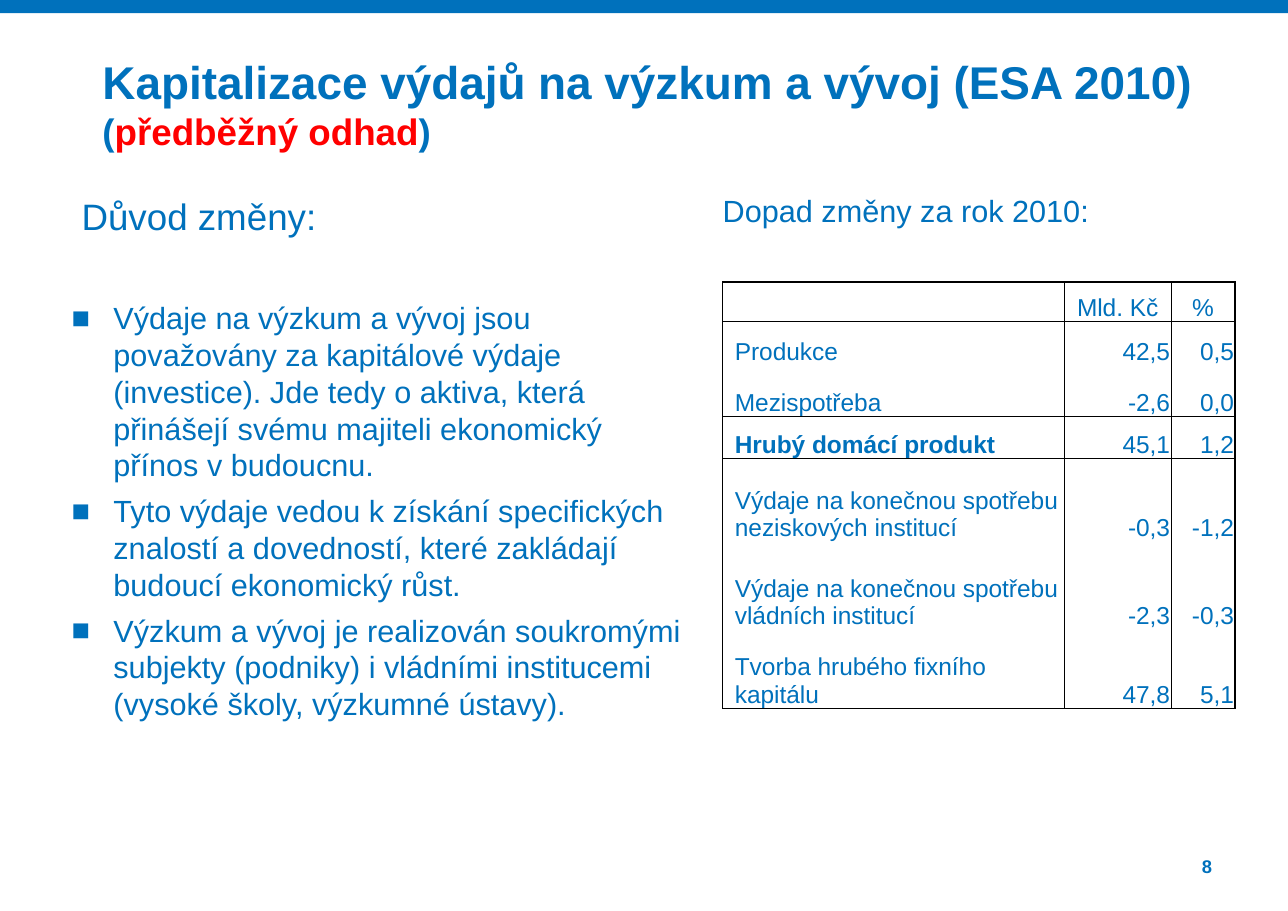
from lxml.etree import SubElement
from pptx import Presentation
from pptx.dml.color import RGBColor
from pptx.enum.shapes import MSO_SHAPE
from pptx.enum.text import MSO_ANCHOR, PP_ALIGN
from pptx.oxml import parse_xml
from pptx.oxml.ns import nsdecls, qn
from pptx.util import Inches, Pt

BLUE = RGBColor(0x00, 0x71, 0xBC)
RED = RGBColor(0xFF, 0x00, 0x00)
BLACK = RGBColor(0x00, 0x00, 0x00)

POINTS = [
    "Výdaje na výzkum a vývoj jsou považovány za kapitálové výdaje (investice). "
    "Jde tedy o aktiva, která přinášejí svému majiteli ekonomický přínos v budoucnu.",
    "Tyto výdaje vedou k získání specifických znalostí a dovedností, "
    "které zakládají budoucí ekonomický růst.",
    "Výzkum a vývoj je realizován soukromými subjekty (podniky) i vládními "
    "institucemi (vysoké školy, výzkumné ústavy).",
]
ROWS = [
    ("", "Mld. Kč", "%"),
    ("Produkce", "42,5", "0,5"),
    ("Mezispotřeba", "-2,6", "0,0"),
    ("Hrubý domácí produkt", "45,1", "1,2"),
    ("Výdaje na konečnou spotřebu neziskových institucí", "-0,3", "-1,2"),
    ("Výdaje na konečnou spotřebu vládních institucí", "-2,3", "-0,3"),
    ("Tvorba hrubého fixního kapitálu", "47,8", "5,1"),
]
WIDTHS = [3.1, 0.97, 0.58]
HEIGHTS = [0.36, 0.4, 0.46, 0.38, 0.76, 0.8, 0.71]
TOTAL = 3
RULES = {0: 1, 1: 0.5, 3: 0.5, 4: 0.5, len(ROWS): 1}
SIDES = {0: 1, 1: 0.5, 2: 0.5, len(WIDTHS): 1}


def add_run(para, text, size, color=BLUE, bold=False):
    """Append one styled run to a paragraph."""
    run = para.add_run()
    run.text = text
    font = run.font
    font.name, font.size, font.bold = "Arial", Pt(size), bold
    font.color.rgb = color


def indent(para, left, first=0):
    """Set the left margin and first-line indent of a paragraph."""
    props = para._p.get_or_add_pPr()
    props.set("marL", str(Inches(left)))
    props.set("indent", str(Inches(first)))
    return props


def add_box(slide, left, top, width, height, inset=0):
    """Add a wrapping text box and return its text frame."""
    box = slide.shapes.add_textbox(
        Inches(left), Inches(top), Inches(width), Inches(height))
    frame = box.text_frame
    frame.word_wrap = True
    frame.margin_left = frame.margin_right = 0
    frame.margin_top = frame.margin_bottom = Inches(inset)
    return frame


def add_bar(slide, width):
    """Add the blue band along the top edge."""
    bar = slide.shapes.add_shape(MSO_SHAPE.RECTANGLE, 0, 0, width, Inches(0.12))
    bar.shadow.inherit = False
    bar.fill.solid()
    bar.fill.fore_color.rgb = BLUE
    bar.line.fill.background()


def add_title(slide):
    """Add the two-line title."""
    frame = add_box(slide, 0.93, 0.49, 10.08, 1.06)
    add_run(frame.paragraphs[0], "Kapitalizace výdajů na výzkum a vývoj (ESA 2010)",
            30, bold=True)
    para = frame.add_paragraph()
    for text, color in (("(", BLUE), ("předběžný odhad", RED), (")", BLUE)):
        add_run(para, text, 24, color, True)


def add_points(slide):
    """Add the reasons for the change as a bulleted list."""
    frame = add_box(slide, 0.65, 1.69, 5.63, 5.2)
    head = frame.paragraphs[0]
    indent(head, 0.09)
    head.line_spacing = Pt(34)
    add_run(head, "Důvod změny:", 24)
    for i, text in enumerate(POINTS):
        para = frame.add_paragraph()
        props = indent(para, 0.38, -0.38)
        SubElement(props, qn("a:buFont"), typeface="Arial")
        SubElement(props, qn("a:buChar"), char="■")
        para.space_before = Pt(6 if i else 40)
        add_run(para, text, 20)


def set_edges(cell, row, col):
    """Draw the four borders of a cell by its grid place."""
    edges = {"L": SIDES[col], "R": SIDES[col + 1],
             "T": RULES.get(row), "B": RULES.get(row + 1)}
    props = cell._tc.get_or_add_tcPr()
    for i, (side, width) in enumerate(edges.items()):
        fill = (f'<a:solidFill><a:srgbClr val="{BLACK}"/></a:solidFill>'
                if width else "<a:noFill/>")
        props.insert(i, parse_xml(
            f'<a:ln{side} {nsdecls("a")} w="{Pt(width or 0)}">{fill}</a:ln{side}>'))


def fill_cell(cell, text, row, col):
    """Style one table cell and write its text."""
    cell.fill.background()
    set_edges(cell, row, col)
    cell.vertical_anchor = MSO_ANCHOR.BOTTOM
    cell.margin_left = cell.margin_right = cell.margin_top = Inches(0.01)
    cell.margin_bottom = 0
    para = cell.text_frame.paragraphs[0]
    if col == 0:
        indent(para, 0.1)
    else:
        para.alignment = PP_ALIGN.RIGHT if row else PP_ALIGN.CENTER
    if text:
        add_run(para, text, 16, bold=(row == TOTAL and col == 0))


def add_grid(slide):
    """Add the table of impacts."""
    table = slide.shapes.add_table(
        len(ROWS), len(WIDTHS), Inches(6.56), Inches(2.56),
        Inches(sum(WIDTHS)), Inches(sum(HEIGHTS))).table
    table.first_row = table.horz_banding = False
    for col, width in zip(table.columns, WIDTHS):
        col.width = Inches(width)
    for row, (height, texts) in enumerate(zip(HEIGHTS, ROWS)):
        table.rows[row].height = Inches(height)
        for col, text in enumerate(texts):
            fill_cell(table.cell(row, col), text, row, col)


def main():
    """Build the slide and save it."""
    deck = Presentation()
    deck.slide_width, deck.slide_height = Inches(11.69), Inches(8.27)
    slide = deck.slides.add_slide(deck.slide_layouts[6])
    add_bar(slide, deck.slide_width)
    num = add_box(slide, 10.22, 7.76, 0.78, 0.21).paragraphs[0]
    num.alignment = PP_ALIGN.RIGHT
    add_run(num, "8", 12, bold=True)
    add_points(slide)
    add_title(slide)
    label = add_box(slide, 6.56, 1.69, 4.17, 0.55, 0.05)
    add_run(label.paragraphs[0], "Dopad změny za rok 2010:", 20)
    add_grid(slide)
    deck.save("out.pptx")


if __name__ == "__main__":
    main()
